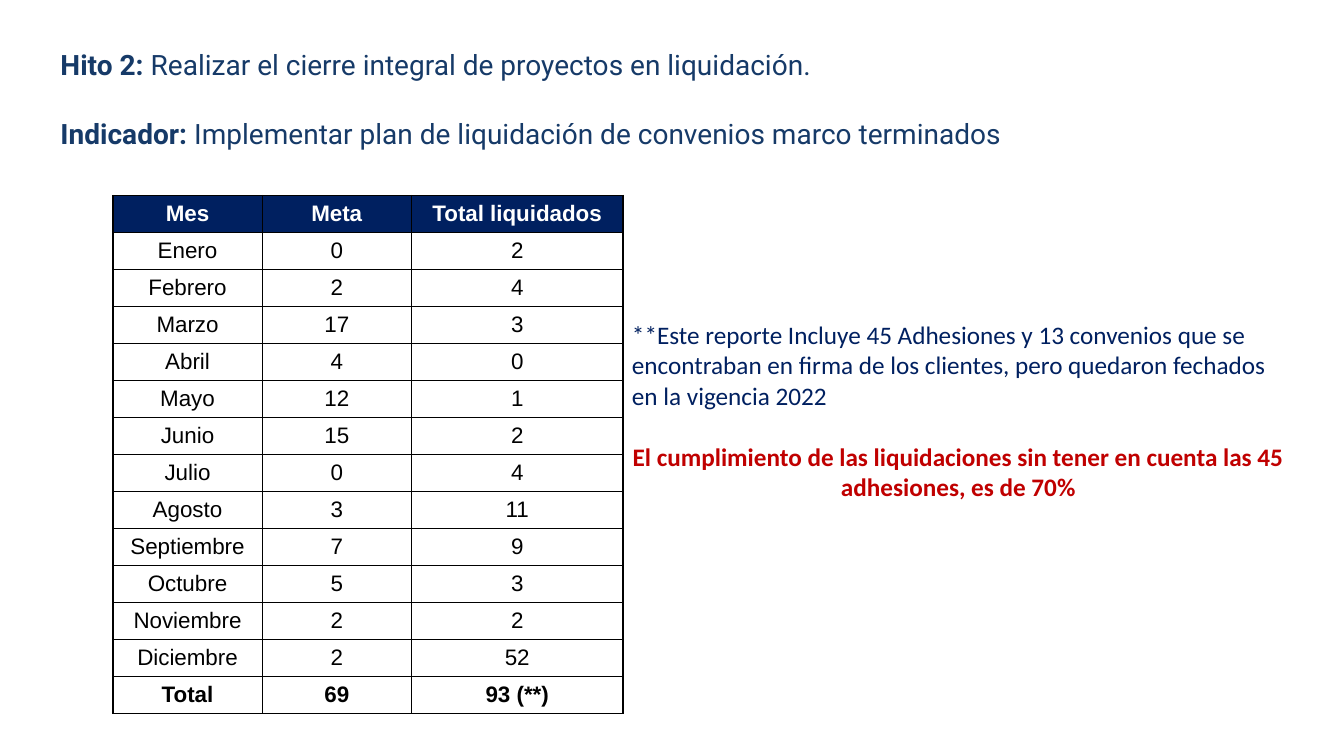
from dataclasses import dataclass

import lxml.etree
import pptx
import pptx.dml.color
import pptx.enum.text
import pptx.oxml.ns
import pptx.util

Inches = pptx.util.Inches
Pt = pptx.util.Pt
ALIGN = pptx.enum.text.PP_ALIGN
ANCHOR = pptx.enum.text.MSO_ANCHOR


@dataclass(frozen=True)
class Theme:
    heading_font: str = "Roboto"
    remark_font: str = "Calibri"
    table_font: str = "Arial"
    heading_size: int = 20
    remark_size: int = 18
    table_size: int = 16
    heading_color: str = "163A68"
    navy: str = "002060"
    red: str = "C00000"
    black: str = "000000"
    white: str = "FFFFFF"


def rgb(value):
    return pptx.dml.color.RGBColor.from_string(value)


class SlideBuilder:
    def __init__(self, presentation, theme):
        self.theme = theme
        self.slide = presentation.slides.add_slide(presentation.slide_layouts[5])

    def style_run(self, run, font, size, color, bold=False):
        run.font.name = font
        run.font.size = Pt(size)
        run.font.color.rgb = rgb(color)
        run.font.bold = bold

    def heading(self, bounds, lines, gap):
        """Fill the title with one paragraph per (label, statement) pair."""
        title = self.slide.shapes.title
        title.left, title.top, title.width, title.height = map(Inches, bounds)
        frame = title.text_frame
        frame.word_wrap = True
        frame.auto_size = pptx.enum.text.MSO_AUTO_SIZE.NONE
        frame.vertical_anchor = ANCHOR.TOP
        for index, (label, statement) in enumerate(lines):
            paragraph = frame.add_paragraph() if index else frame.paragraphs[0]
            paragraph.alignment = ALIGN.JUSTIFY
            paragraph.line_spacing = 1.0
            paragraph.space_before = Pt(gap if index else 0)
            for words, bold in ((label + " ", True), (statement, False)):
                run = paragraph.add_run()
                run.text = words
                self.style_run(run, self.theme.heading_font, self.theme.heading_size,
                               self.theme.heading_color, bold)

    def remarks(self, bounds, entries, gap):
        """Add a text box from (words, alignment, color, bold) entries."""
        frame = self.slide.shapes.add_textbox(*map(Inches, bounds)).text_frame
        frame.word_wrap = True
        for index, (words, alignment, color, bold) in enumerate(entries):
            paragraph = frame.add_paragraph() if index else frame.paragraphs[0]
            paragraph.text = words
            paragraph.alignment = alignment
            if index:
                paragraph.space_before = Pt(gap)
            self.style_run(paragraph.runs[0], self.theme.remark_font,
                           self.theme.remark_size, color, bold)

    def cell_borders(self, cell):
        properties = cell._tc.get_or_add_tcPr()
        qn = pptx.oxml.ns.qn
        for side in ("a:lnL", "a:lnR", "a:lnT", "a:lnB"):
            line = lxml.etree.SubElement(properties, qn(side), w=str(Pt(1)))
            fill = lxml.etree.SubElement(line, qn("a:solidFill"))
            lxml.etree.SubElement(fill, qn("a:srgbClr"), val=self.theme.black)

    def table(self, bounds, column_widths, rows):
        """Add a grid whose first row is the header and last row the total."""
        grid = self.slide.shapes.add_table(
            len(rows), len(column_widths), *map(Inches, bounds)).table
        grid.horz_banding = False
        for column, width in zip(grid.columns, column_widths):
            column.width = Inches(width)
        for row_index, values in enumerate(rows):
            header = row_index == 0
            bold = header or row_index == len(rows) - 1
            for column_index, value in enumerate(values):
                cell = grid.cell(row_index, column_index)
                cell.text = str(value)
                cell.vertical_anchor = ANCHOR.MIDDLE
                cell.margin_left = cell.margin_right = Inches(0.05)
                cell.margin_top = cell.margin_bottom = Inches(0.05)
                self.cell_borders(cell)
                cell.fill.solid()
                cell.fill.fore_color.rgb = rgb(
                    self.theme.navy if header else self.theme.white)
                paragraph = cell.text_frame.paragraphs[0]
                paragraph.alignment = ALIGN.CENTER
                self.style_run(paragraph.runs[0], self.theme.table_font,
                               self.theme.table_size,
                               self.theme.white if header else self.theme.black, bold)


def main():
    presentation = pptx.Presentation()
    presentation.slide_width = Inches(13.33)
    presentation.slide_height = Inches(7.5)
    theme = Theme()
    builder = SlideBuilder(presentation, theme)

    builder.heading((0.5, 0.42, 10.9, 1.12), [
        ("Hito 2:", "Realizar el cierre integral de proyectos en liquidación."),
        ("Indicador:", "Implementar plan de liquidación de convenios marco terminados"),
    ], gap=25)

    builder.remarks((6.17, 3.12, 6.67, 1.92), [
        ("**Este reporte Incluye 45 Adhesiones y 13 convenios que se encontraban en "
         "firma de los clientes, pero quedaron fechados en la vigencia 2022",
         ALIGN.LEFT, theme.navy, False),
        ("El cumplimiento de las liquidaciones sin tener en cuenta las 45 adhesiones, "
         "es de 70%", ALIGN.CENTER, theme.red, True),
    ], gap=22)

    builder.table((1.12, 1.94, 5.06, 5.13), (1.48, 1.48, 2.1), [
        ("Mes", "Meta", "Total liquidados"),
        ("Enero", 0, 2),
        ("Febrero", 2, 4),
        ("Marzo", 17, 3),
        ("Abril", 4, 0),
        ("Mayo", 12, 1),
        ("Junio", 15, 2),
        ("Julio", 0, 4),
        ("Agosto", 3, 11),
        ("Septiembre", 7, 9),
        ("Octubre", 5, 3),
        ("Noviembre", 2, 2),
        ("Diciembre", 2, 52),
        ("Total", 69, "93 (**)"),
    ])

    presentation.save("out.pptx")


if __name__ == "__main__":
    main()
